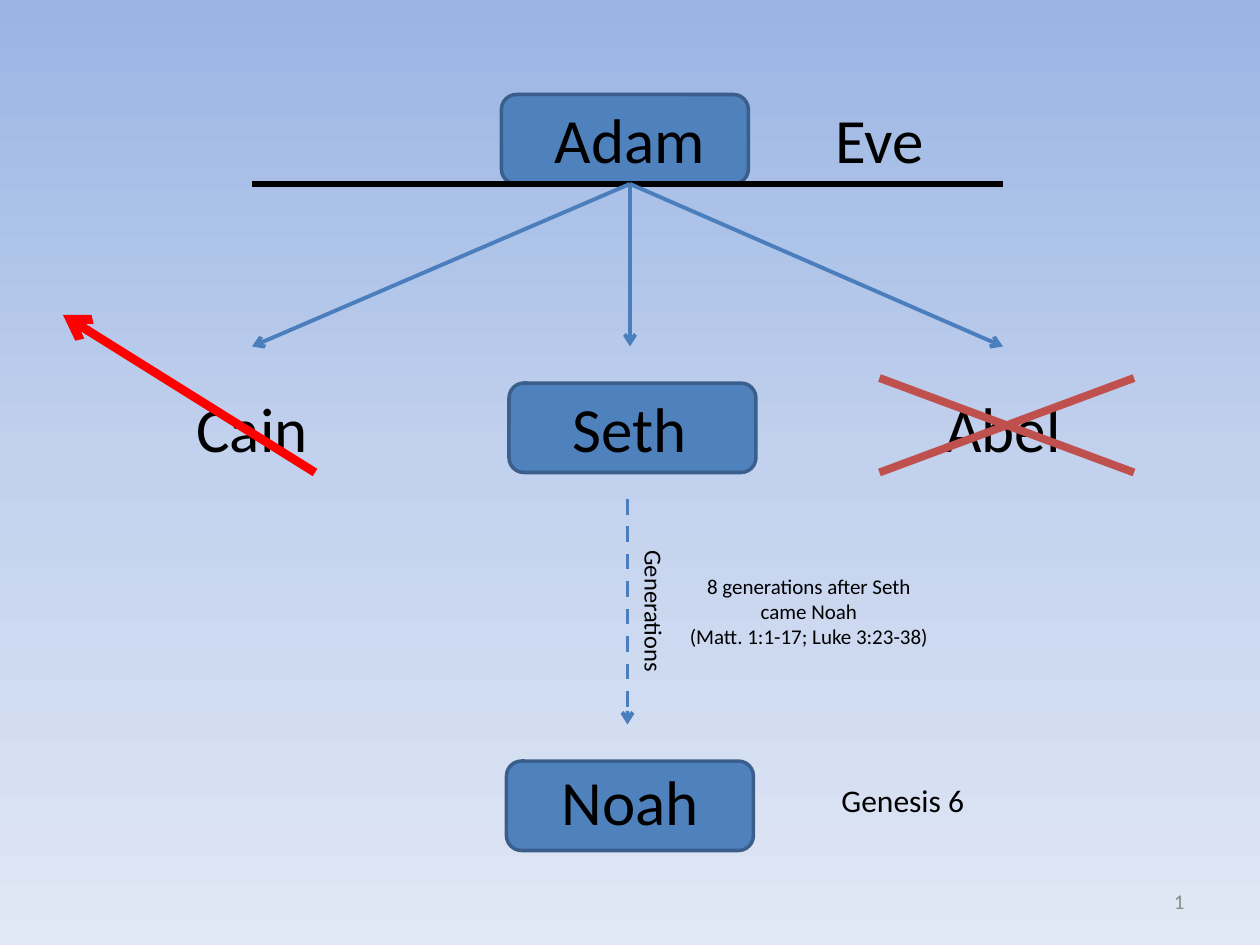
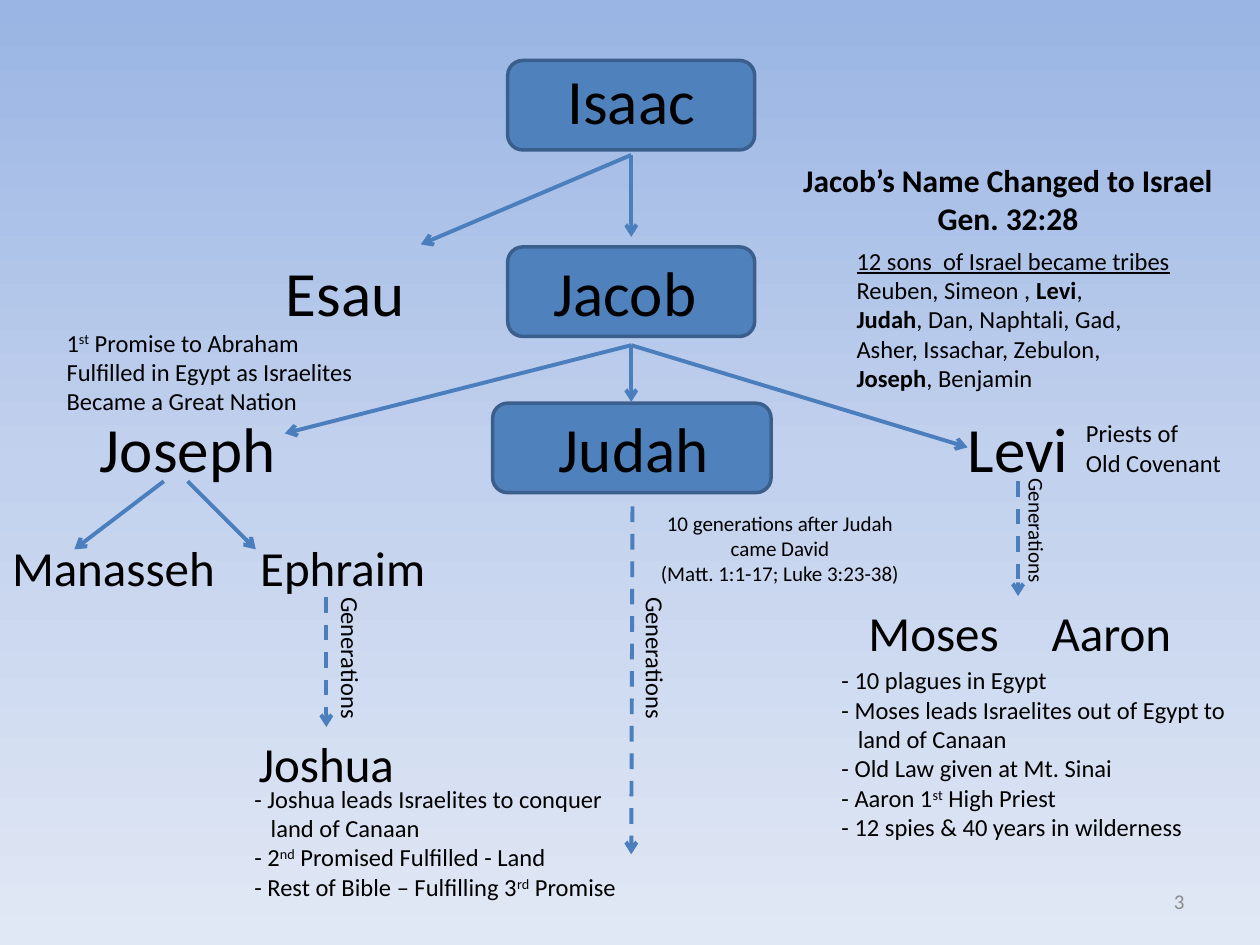
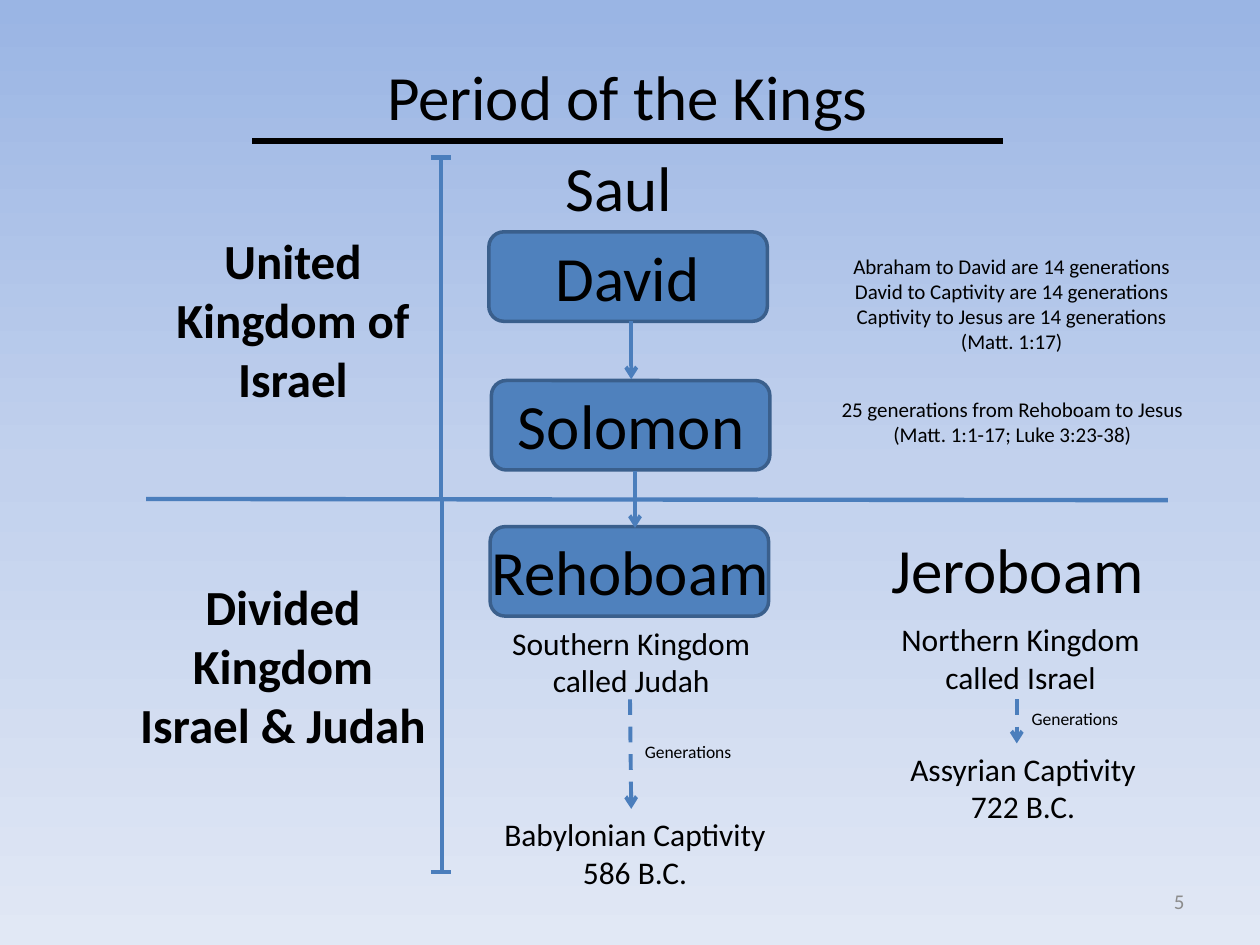
from copy import deepcopy
from dataclasses import dataclass

from pptx import Presentation
from pptx.dml.color import RGBColor
from pptx.enum.dml import MSO_LINE
from pptx.enum.shapes import MSO_CONNECTOR, MSO_SHAPE
from pptx.enum.text import MSO_AUTO_SIZE, PP_ALIGN
from pptx.oxml.ns import qn
from pptx.oxml.xmlchemy import OxmlElement
from pptx.util import Inches, Pt

# Shared look
FONT = "Calibri"
BLACK = RGBColor(0x00, 0x00, 0x00)
GRAY = RGBColor(0x8C, 0x8C, 0x8C)
BOX_FILL = RGBColor(0x4F, 0x81, 0xBD)
BOX_BORDER = RGBColor(0x3A, 0x5F, 0x8C)
ARROW_BLUE = RGBColor(0x4B, 0x7E, 0xBC)
CROSS_RED = RGBColor(0xC0, 0x50, 0x4D)
EXILE_RED = RGBColor(0xFF, 0x00, 0x00)
BACKGROUND_STOPS = (
    (0, RGBColor(0x9A, 0xB5, 0xE4)),
    (0.5, RGBColor(0xC2, 0xD1, 0xED)),
    (1, RGBColor(0xE1, 0xE8, 0xF5)),
)
NAME_SIZE, SMALL_NAME_SIZE = 36, 28
NAME_WIDTH, NAME_HEIGHT = 1.96, 0.71
KING_WIDTH = 2.21
LINE_SPACING = 1.22
CONTINUATION_INDENT = 0.13
CENTER, LEFT, RIGHT = PP_ALIGN.CENTER, PP_ALIGN.LEFT, PP_ALIGN.RIGHT


@dataclass(frozen=True)
class Run:
    text: str
    bold: bool = False
    underline: bool = False
    superscript: bool = False


@dataclass(frozen=True)
class Continuation:
    """The indented second line of a list entry."""
    text: str


Entry = str | Continuation | tuple[str | Run, ...]


@dataclass(frozen=True)
class Box:
    left: float
    top: float
    width: float = NAME_WIDTH


@dataclass(frozen=True)
class Text:
    left: float
    top: float
    width: float
    entries: tuple[Entry, ...]
    size: int
    align: PP_ALIGN = CENTER
    wrap: bool = True
    bold: bool = False
    color: RGBColor = BLACK
    rotation: int = 0
    rows: int = 0  # rows after wrapping, if more than the entries

    @property
    def height(self) -> float:
        rows = self.rows or len(self.entries)
        return round(rows * self.size * LINE_SPACING / 72 + 0.1, 2)


@dataclass(frozen=True)
class Line:
    start: tuple[float, float]
    end: tuple[float, float]
    color: RGBColor = ARROW_BLUE
    width: float = 2.25
    dashed: bool = False
    arrow: bool = False


@dataclass(frozen=True)
class Page:
    number: int
    boxes: list[Box]
    texts: list[Text]
    lines: list[Line]


# Recurring elements
def name(text: str, left: float, top: float, width: float = NAME_WIDTH,
         size: int = NAME_SIZE) -> Text:
    return Text(left, top, width, (text,), size)


def small_name(text: str, left: float, top: float) -> Text:
    return name(text, left, top, size=SMALL_NAME_SIZE)


def note(left: float, top: float, width: float, *entries: Entry,
         size: int = 14, align: PP_ALIGN = LEFT, bold: bool = False) -> Text:
    return Text(left, top, width, entries, size, align, wrap=False, bold=bold)


def reference(left: float, top: float, width: float, *entries: str) -> Text:
    return note(left, top, width, *entries, size=12, align=CENTER)


def kingdom(left: float, top: float, *entries: str) -> Text:
    return Text(left, top, 2.36, entries, 18)


def generations(left: float, top: float, width: float = 1.18, size: int = 14) -> Text:
    return Text(left, top, width, ("Generations",), size, LEFT, wrap=False, rotation=90)


def small_generations(left: float, top: float) -> Text:
    return Text(left, top, 0.93, ("Generations",), 10, LEFT)


def era(left: float, top: float, width: float, text: str) -> Text:
    return Text(left, top, width, (text,), SMALL_NAME_SIZE, bold=True, rows=3)


def page_number(number: int) -> Text:
    return Text(7.17, 7, 2.33, (str(number),), 12, RIGHT, color=GRAY)


def descent(start: tuple[float, float], *children: tuple[float, float],
            dashed: bool = False) -> list[Line]:
    return [Line(start, child, dashed=dashed, arrow=True) for child in children]


def heading_rule(top: float) -> Line:
    return Line((2, top), (7.96, top), BLACK, 3)


def bracket(left: float, top: float, bottom: float, cap: float) -> list[Line]:
    """A vertical span with a short cap at the given height."""
    return [Line((left, top), (left, bottom), width=2.5),
            Line((3.42, cap), (3.58, cap), width=2.5)]


# Slide contents
ADAM = Page(
    number=1,
    boxes=[Box(3.98, 0.75), Box(4.04, 3.04), Box(4.02, 6.04)],
    texts=[
        name("Adam", 4.02, 0.75),
        name("Eve", 6, 0.75),
        name("Cain", 1.02, 3.04),
        name("Seth", 4.02, 3.04),
        name("Abel", 6.98, 3.04),
        name("Noah", 4.02, 6),
        note(6.58, 6.15, 1.19, "Genesis 6", size=18),
        generations(4.6, 4.69),
        reference(5.36, 4.5, 2.12, "8 generations after Seth", "came Noah",
                  "(Matt. 1:1-17; Luke 3:23-38)"),
    ],
    lines=[
        heading_rule(1.46),
        *descent((5, 1.46), (2, 2.75), (5, 2.75), (7.96, 2.75)),
        *descent((4.98, 3.96), (4.98, 5.75), dashed=True),
        Line((2.5, 3.75), (0.5, 2.5), EXILE_RED, 5, arrow=True),
        Line((6.98, 3.75), (9, 3), CROSS_RED, 4.5),
        Line((9, 3.75), (6.98, 3), CROSS_RED, 4.5),
    ],
)

ISAAC = Page(
    number=3,
    boxes=[Box(4.03, 0.48), Box(4.03, 1.96), Box(3.91, 3.2, KING_WIDTH)],
    texts=[
        name("Isaac", 4.03, 0.44),
        name("Esau", 1.76, 1.96),
        name("Jacob", 4.05, 1.96, 1.82),
        name("Joseph", 0.51, 3.2),
        name("Judah", 4, 3.2, 2.06),
        name("Levi", 7.1, 3.2),
        small_name("Manasseh", -0.08, 4.22),
        small_name("Ephraim", 1.74, 4.22),
        small_name("Moses", 6.43, 4.73),
        small_name("Aaron", 7.84, 4.73),
        small_name("Joshua", 1.61, 5.77),
        generations(2.19, 5.06),
        generations(4.61, 5.06),
        generations(7.71, 4.07, 1.04, 12),
        note(6.26, 1.23, 3.48, "Jacob’s Name Changed to Israel", "Gen. 32:28",
             size=18, align=CENTER, bold=True),
        note(6.7, 1.9, 2.76,
             (Run("12 sons  of Israel became tribes", underline=True),),
             ("Reuben, Simeon , ", Run("Levi", bold=True), ","),
             (Run("Judah", bold=True), ", Dan, Naphtali, Gad,"),
             "Asher, Issachar, Zebulon,",
             (Run("Joseph", bold=True), ", Benjamin")),
        note(0.43, 2.55, 2.5,
             ("1", Run("st", superscript=True), " Promise to Abraham"),
             "Fulfilled in Egypt as Israelites",
             "Became a Great Nation"),
        note(8.52, 3.27, 1.28, "Priests of", "Old Covenant"),
        note(6.58, 5.23, 3.32,
             "- 10 plagues in Egypt",
             "- Moses leads Israelites out of Egypt to",
             Continuation("land of Canaan"),
             "- Old Law given at Mt. Sinai",
             ("- Aaron 1", Run("st", superscript=True), " High Priest"),
             "- 12 spies & 40 years in wilderness"),
        note(1.92, 6.17, 3.11,
             "- Joshua leads Israelites to conquer",
             Continuation("land of Canaan"),
             ("- 2", Run("nd", superscript=True), " Promised Fulfilled - Land"),
             ("- Rest of Bible – Fulfilling 3", Run("rd", superscript=True), " Promise")),
        reference(5.13, 4, 2.12, "10 generations after Judah", "came David",
                  "(Matt. 1:1-17; Luke 3:23-38)"),
    ],
    lines=[
        *descent((5.01, 1.23), (3.34, 1.94), (5.01, 1.88)),
        *descent((5.01, 2.74), (2.26, 3.44), (5.01, 3.19), (7.68, 3.55)),
        *descent((1.3, 3.82), (0.59, 4.36)),
        *descent((1.49, 3.82), (2.03, 4.36)),
        *descent((5.02, 4.02), (5.01, 6.78), dashed=True),
        *descent((8.08, 3.82), (8.08, 4.73), dashed=True),
        *descent((2.59, 4.74), (2.59, 5.77), dashed=True),
    ],
)

KINGS = Page(
    number=5,
    boxes=[Box(3.88, 1.84, KING_WIDTH), Box(3.9, 3.02, KING_WIDTH),
           Box(3.89, 4.18, KING_WIDTH)],
    texts=[
        name("Period of the Kings", 2, 0.41, 5.96),
        name("Saul", 3.88, 1.13, 2.06),
        name("David", 3.95, 1.84, 2.06),
        name("Solomon", 3.98, 3.02, 2.06),
        name("Rehoboam", 3.75, 4.18, 2.5),
        name("Jeroboam", 6.92, 4.16, 2.31),
        era(1.16, 1.78, 2.33, "United Kingdom of Israel"),
        era(1, 4.53, 2.49, "Divided Kingdom Israel & Judah"),
        kingdom(3.83, 4.9, "Southern Kingdom", "called Judah"),
        kingdom(6.92, 4.87, "Northern Kingdom", "called Israel"),
        kingdom(6.94, 5.9, "Assyrian Captivity", "722 B.C."),
        kingdom(3.86, 6.42, "Babylonian Captivity", "586 B.C."),
        small_generations(5.02, 5.83),
        small_generations(8.09, 5.57),
        reference(6.66, 1.96, 2.74, "Abraham to David are 14 generations",
                  "David to Captivity are 14 generations",
                  "Captivity to Jesus are 14 generations", "(Matt. 1:17)"),
        reference(6.56, 3.1, 2.95, "25 generations from Rehoboam to Jesus",
                  "(Matt. 1:1-17; Luke 3:23-38)"),
    ],
    lines=[
        heading_rule(1.12),
        *bracket(3.5, 1.25, 3.96, cap=1.25),
        *bracket(3.51, 3.97, 6.92, cap=6.92),
        Line((1.16, 3.96), (9.27, 3.97), width=2.5),
        *descent((5.01, 2.55), (5.01, 3.01)),
        *descent((5.04, 3.74), (5.04, 4.19)),
        *descent((5, 5.55), (5.01, 6.42), dashed=True),
        *descent((8.07, 5.55), (8.07, 5.9), dashed=True),
    ],
)


# Drawing
def paint_background(slide) -> None:
    fill = slide.background.fill
    fill.gradient()
    fill.gradient_angle = 270
    stop_list = slide.element.find(".//" + qn("a:gsLst"))
    stop_list.append(deepcopy(stop_list[0]))
    for stop, (position, color) in zip(fill.gradient_stops, BACKGROUND_STOPS):
        stop.position = position
        stop.color.rgb = color


def draw_box(slide, box: Box) -> None:
    shape = slide.shapes.add_shape(
        MSO_SHAPE.ROUNDED_RECTANGLE, Inches(box.left), Inches(box.top),
        Inches(box.width), Inches(NAME_HEIGHT))
    shape.shadow.inherit = False
    shape.fill.solid()
    shape.fill.fore_color.rgb = BOX_FILL
    shape.line.color.rgb = BOX_BORDER
    shape.line.width = Pt(2)


def fill_paragraph(paragraph, entry: Entry) -> None:
    if isinstance(entry, Continuation):
        properties = paragraph._p.get_or_add_pPr()
        properties.set("marL", str(Inches(CONTINUATION_INDENT)))
        properties.set("indent", "0")
        entry = entry.text
    for part in entry if isinstance(entry, tuple) else (entry,):
        source = Run(part) if isinstance(part, str) else part
        run = paragraph.add_run()
        run.text = source.text
        if source.bold:
            run.font.bold = True
        if source.underline:
            run.font.underline = True
        if source.superscript:
            run._r.get_or_add_rPr().set("baseline", "30000")


def draw_text(slide, text: Text) -> None:
    shape = slide.shapes.add_textbox(
        Inches(text.left), Inches(text.top), Inches(text.width), Inches(text.height))
    shape.rotation = text.rotation
    frame = shape.text_frame
    frame.word_wrap = text.wrap
    frame.auto_size = MSO_AUTO_SIZE.SHAPE_TO_FIT_TEXT
    for index, entry in enumerate(text.entries):
        paragraph = frame.add_paragraph() if index else frame.paragraphs[0]
        paragraph.alignment = text.align
        font = paragraph.font
        font.name, font.size, font.bold = FONT, Pt(text.size), text.bold
        font.color.rgb = text.color
        fill_paragraph(paragraph, entry)


def draw_line(slide, line: Line) -> None:
    connector = slide.shapes.add_connector(
        MSO_CONNECTOR.STRAIGHT, *map(Inches, line.start + line.end))
    connector.line.color.rgb = line.color
    connector.line.width = Pt(line.width)
    if line.dashed:
        connector.line.dash_style = MSO_LINE.DASH
    if line.arrow:
        tail = OxmlElement("a:tailEnd")
        tail.set("type", "arrow")
        connector.line._get_or_add_ln().append(tail)
    connector._element.spPr.append(OxmlElement("a:effectLst"))


def draw_page(presentation, page: Page) -> None:
    slide = presentation.slides.add_slide(presentation.slide_layouts[6])
    paint_background(slide)
    for box in page.boxes:
        draw_box(slide, box)
    for text in (*page.texts, page_number(page.number)):
        draw_text(slide, text)
    for line in page.lines:
        draw_line(slide, line)


def main() -> None:
    presentation = Presentation()
    presentation.slide_width = Inches(10)
    presentation.slide_height = Inches(7.5)
    for page in (ADAM, ISAAC, KINGS):
        draw_page(presentation, page)
    presentation.save("out.pptx")


if __name__ == "__main__":
    main()
